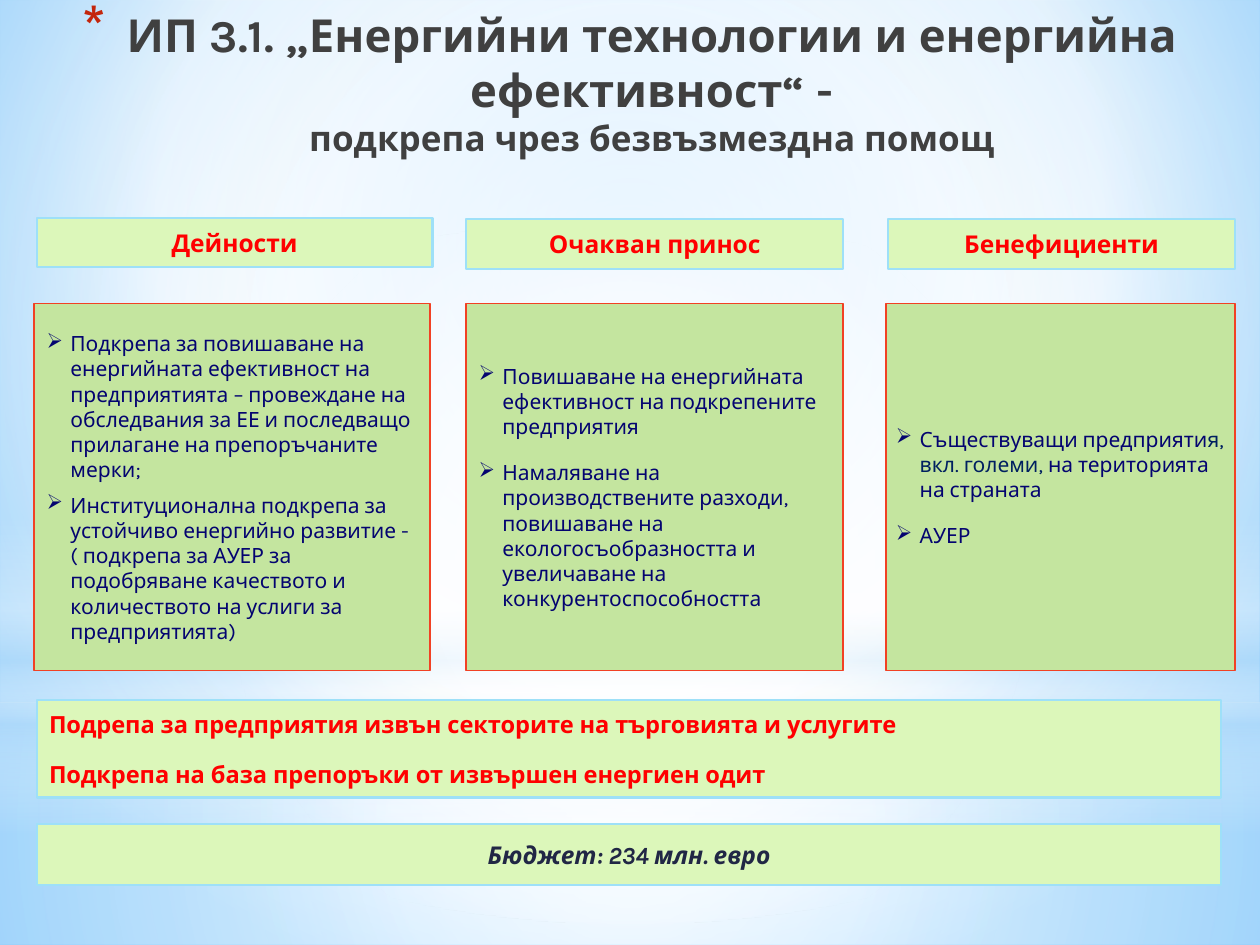
from dataclasses import dataclass

import lxml.etree
import pptx
import pptx.dml.color
import pptx.enum.shapes
import pptx.enum.text
import pptx.oxml.ns
import pptx.util

Cm = pptx.util.Cm
Pt = pptx.util.Pt
RGBColor = pptx.dml.color.RGBColor
Kind = pptx.enum.shapes.MSO_SHAPE
Align = pptx.enum.text.PP_ALIGN
qn = pptx.oxml.ns.qn

RED = RGBColor(0xFF, 0x00, 0x00)
NAVY = RGBColor(0x04, 0x04, 0x70)
DEEP = RGBColor(0x00, 0x20, 0x60)
INK = RGBColor(0x21, 0x27, 0x45)
GREY = RGBColor(0x40, 0x40, 0x40)
STAR = RGBColor(0xC3, 0x26, 0x0C)
LIME = RGBColor(0xDC, 0xF7, 0xBA)
LEAF = RGBColor(0xC4, 0xE5, 0x9F)
AQUA = RGBColor(0x9E, 0xE0, 0xF8)
BRICK = RGBColor(0xF1, 0x41, 0x24)
WHITE = RGBColor(0xFF, 0xFF, 0xFF)
SKY = RGBColor(0xB4, 0xDC, 0xFA)
PALE = RGBColor(0x9E, 0xD5, 0xFF)
BLUE = RGBColor(0x5B, 0xB9, 0xFF)

FONT = "Karla"
WIDE = 25.4
HIGH = 19.05
EDGE = 0.74
SPAN = 23.88


@dataclass
class Box:
    """Left, top, width and height in centimetres."""
    left: float
    top: float
    width: float
    height: float


@dataclass
class Stop:
    """One gradient stop; place and alpha in percent."""
    place: int
    color: RGBColor
    alpha: int = 100


@dataclass
class Span:
    """A piece of a paragraph that may differ in colour or size."""
    text: str
    color: RGBColor | None = None
    size: float | None = None
    split: bool = False


@dataclass
class Column:
    head: str
    top: Box
    body: Box
    items: list
    before: float = 6
    left: float = 0.25
    right: float = 0.25


@dataclass
class Glow:
    kind: int
    box: Box
    stops: list
    focus: tuple | None = (50, 50, 50, 50)


def blend(root, stops: list, focus: tuple | None) -> None:
    """Swap the solid fill below root for a gradient, radial if focus is given."""
    solid = root.find(qn("a:solidFill"))
    grad = lxml.etree.Element(qn("a:gradFill"), rotWithShape="1")
    group = lxml.etree.SubElement(grad, qn("a:gsLst"))
    for stop in stops:
        point = lxml.etree.SubElement(group, qn("a:gs"), pos=str(stop.place * 1000))
        color = lxml.etree.SubElement(point, qn("a:srgbClr"), val=str(stop.color))
        if stop.alpha < 100:
            lxml.etree.SubElement(color, qn("a:alpha"), val=str(stop.alpha * 1000))
    if focus:
        round_ = lxml.etree.SubElement(grad, qn("a:path"), path="circle")
        sides = {side: str(part * 1000) for side, part in zip("ltrb", focus)}
        lxml.etree.SubElement(round_, qn("a:fillToRect"), sides)
    else:
        lxml.etree.SubElement(grad, qn("a:lin"), ang="5400000", scaled="0")
    root.replace(solid, grad)


def draw(slide, box: Box, fill: RGBColor, line: RGBColor | None = None,
         width: float = 1.25, kind: int = Kind.RECTANGLE):
    shape = slide.shapes.add_shape(
        kind, Cm(box.left), Cm(box.top), Cm(box.width), Cm(box.height))
    shape.shadow.inherit = False
    shape.fill.solid()
    shape.fill.fore_color.rgb = fill
    if line is None:
        shape.line.fill.background()
    else:
        shape.line.color.rgb = line
        shape.line.width = Pt(width)
    return shape


def mark(para, sign: str, indent: float, color: RGBColor | None, scale: int) -> None:
    """Give a paragraph a hanging bullet."""
    props = para._p.get_or_add_pPr()
    props.set("marL", str(Cm(indent)))
    props.set("indent", str(-Cm(indent)))
    if color is not None:
        tint = lxml.etree.SubElement(props, qn("a:buClr"))
        lxml.etree.SubElement(tint, qn("a:srgbClr"), val=str(color))
    lxml.etree.SubElement(props, qn("a:buSzPct"), val=str(scale * 1000))
    lxml.etree.SubElement(props, qn("a:buChar"), char=sign)


def write(shape, lines: list, *, size: float, color: RGBColor, bold: bool = False,
          italic: bool = False, align: int = Align.LEFT, before: float = 0,
          after: float = 0, sign: str = "", indent: float = 0.48,
          tint: RGBColor | None = None, scale: int = 100,
          left: float = 0.25, right: float = 0.25) -> None:
    """Fill a shape with paragraphs; each is a string or a list of spans."""
    frame = shape.text_frame
    frame.word_wrap = True
    frame.vertical_anchor = pptx.enum.text.MSO_ANCHOR.MIDDLE
    frame.margin_left, frame.margin_right = Cm(left), Cm(right)
    for rank, line in enumerate(lines):
        para = frame.add_paragraph() if rank else frame.paragraphs[0]
        para.alignment = align
        para.space_before, para.space_after = Pt(before), Pt(after)
        if sign:
            mark(para, sign, indent, tint, scale)
        for span in [Span(line)] if isinstance(line, str) else line:
            run = para.add_run()
            run.text = span.text
            font = run.font
            font.name, font.bold, font.italic = FONT, bold, italic
            font.size = Pt(span.size or size)
            font.color.rgb = span.color or color
            if span.split:
                para.add_line_break()


GLOWS = [
    Glow(Kind.RECTANGLE, Box(0, 14.17, WIDE, 4.88),
         [Stop(0, WHITE, 91), Stop(37, WHITE, 76), Stop(100, SKY, 79)]),
    Glow(Kind.RECTANGLE, Box(0, 0, WIDE, 14.17),
         [Stop(0, WHITE, 89), Stop(48, WHITE, 62), Stop(100, SKY, 79)]),
    Glow(Kind.RECTANGLE, Box(0, 10.46, WIDE, 6.35),
         [Stop(0, WHITE, 0), Stop(29, WHITE, 30), Stop(45, SKY, 40),
          Stop(55, WHITE, 26), Stop(65, SKY, 60), Stop(100, WHITE, 0)], None),
    Glow(Kind.OVAL, Box(0, 4.45, WIDE, 14.17), [Stop(0, WHITE), Stop(56, WHITE, 0)]),
]

COLUMNS = [
    Column("Дейности", Box(EDGE, 4.39, 7.98, 1), Box(0.69, 6.12, 7.98, 7.4), [
        "Подкрепа за повишаване на енергийната ефективност на предприятията – "
        "провеждане на обследвания за ЕЕ и последващо прилагане на препоръчаните мерки;",
        "Институционална подкрепа за устойчиво енергийно развитие - ( подкрепа за АУЕР "
        "за подобряване качеството и количеството на услиги за предприятията)",
    ], before=0),
    Column("Очакван принос", Box(9.4, 4.42, 7.6, 1), Box(9.4, 6.12, 7.6, 7.4), [
        "Повишаване на енергийната ефективност на подкрепените предприятия",
        "Намаляване на производствените разходи, повишаване на екологосъобразността "
        "и увеличаване на конкурентоспособността",
    ], right=0.1),
    Column("Бенефициенти", Box(17.9, 4.42, 7, 1), Box(17.86, 6.12, 7.04, 7.4), [
        [Span("Съществуващи предприяти"), Span("я, вкл. големи, ", DEEP),
         Span("на територията на страната")],
        "АУЕР",
    ], left=0.2, right=0),
]


def main() -> None:
    deck = pptx.Presentation()
    deck.slide_width, deck.slide_height = Cm(WIDE), Cm(HIGH)
    slide = deck.slides.add_slide(deck.slide_layouts[6])

    back = slide.background.fill
    back.solid()
    back.fore_color.rgb = WHITE
    blend(slide.element.find(".//" + qn("p:bgPr")),
          [Stop(0, PALE), Stop(60, WHITE), Stop(100, BLUE)], (20, 10, 20, 60))
    for glow in GLOWS:
        shape = draw(slide, glow.box, WHITE, kind=glow.kind)
        blend(shape.element.spPr, glow.stops, glow.focus)

    title = slide.shapes.add_textbox(0, 0, Cm(WIDE), Cm(3.33))
    write(title, [[
        Span("ИП 3.1. „Енергийни технологии и енергийна ефективност“ -", split=True),
        Span("подкрепа чрез безвъзмездна помощ", size=20),
    ]], size=26, color=GREY, bold=True, align=Align.CENTER,
        sign="*", indent=0.89, tint=STAR, scale=128)

    for col in COLUMNS:
        write(draw(slide, col.top, LIME, AQUA), [col.head],
              size=14, color=RED, bold=True, align=Align.CENTER)
        write(draw(slide, col.body, LEAF, BRICK, 1), col.items,
              size=12, color=NAVY, before=col.before, after=6, sign="➢",
              left=col.left, right=col.right)

    write(draw(slide, Box(EDGE, 14.12, SPAN, 1.96), LIME, AQUA), [
        "Подрепа за предприятия извън секторите на търговията и услугите",
        "Подкрепа на база препоръки от извършен енергиен одит",
    ], size=13.5, color=RED, bold=True, before=6, after=6)
    write(draw(slide, Box(EDGE, 16.61, SPAN, 1.24), LIME, AQUA),
          ["Бюджет: 234 млн. евро"], size=14, color=INK, bold=True, italic=True,
          align=Align.CENTER, before=6)

    deck.save("out.pptx")


if __name__ == "__main__":
    main()
